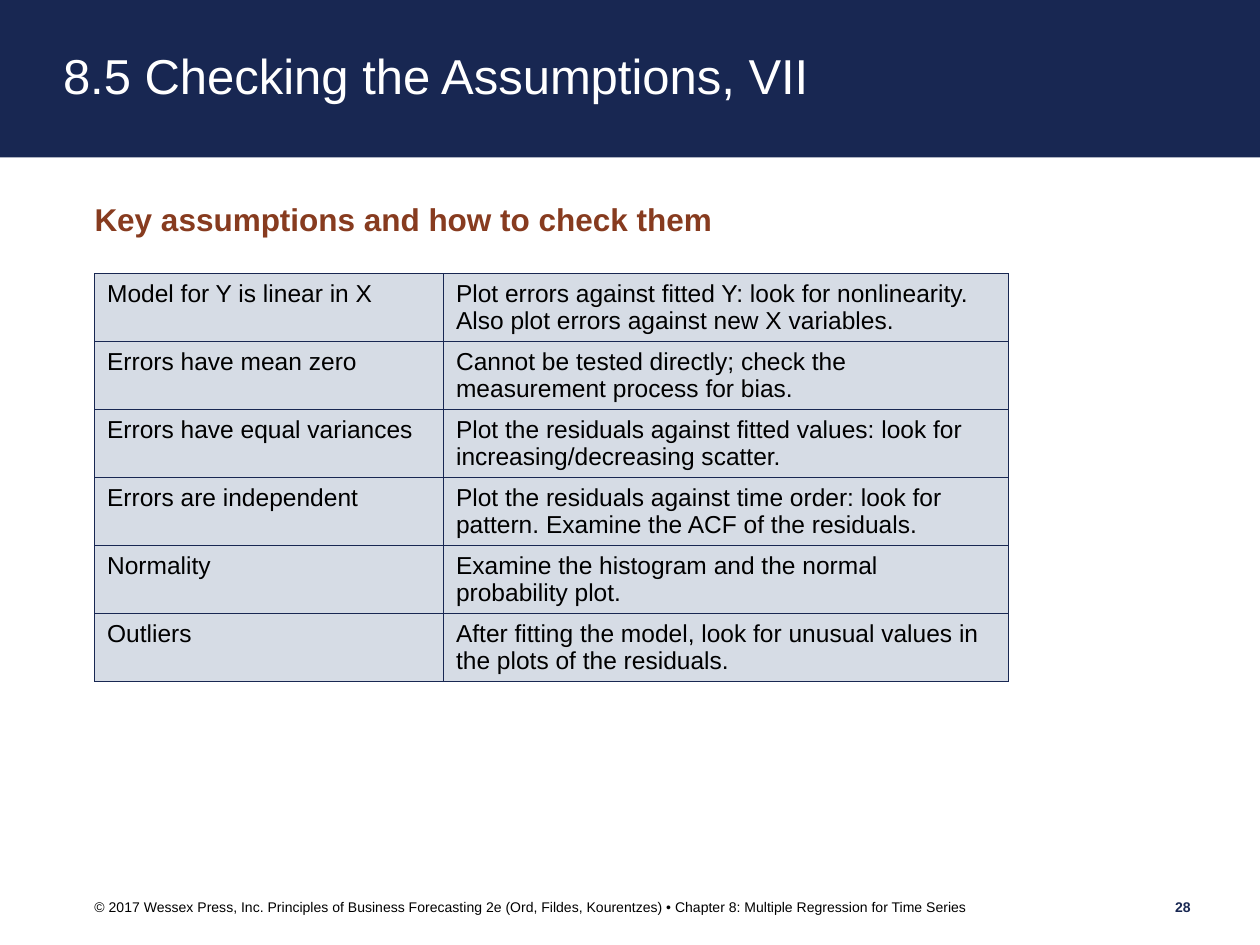
from dataclasses import dataclass

import lxml.etree
import pptx
import pptx.dml.color
import pptx.enum.text
import pptx.oxml.ns
import pptx.util

Inches = pptx.util.Inches
Pt = pptx.util.Pt
ANCHOR = pptx.enum.text.MSO_ANCHOR
ALIGN = pptx.enum.text.PP_ALIGN

NAVY, RUST, PALE, BLACK, WHITE = "182752", "873B1F", "D6DCE5", "000000", "FFFFFF"
TABLE_LEFT, TABLE_TOP, ROW_HEIGHT = 0.75, 2.17, 0.54
COLUMN_WIDTHS = (2.77, 4.48)


@dataclass
class Label:
    text: str
    left: float
    top: float
    width: float
    height: float
    size: int
    color: str
    bold: bool = False
    align: ALIGN = ALIGN.LEFT
    anchor: ANCHOR = ANCHOR.MIDDLE
    line_spacing: float = 1.0
    left_inset: float = 0
    vertical_inset: float = 0


@dataclass
class Assumption:
    name: str
    check: str


TITLE = Label("8.5 Checking the Assumptions, VII", 0, 0, 10, 1.25, 28, WHITE,
              line_spacing=0.9, left_inset=0.5, vertical_inset=0.05)
LABELS = [
    Label("Key assumptions and how to check them", 0.75, 1.62, 8.25, 5.14, 18, RUST,
          bold=True, anchor=ANCHOR.TOP, line_spacing=0.9),
    Label("© 2017 Wessex Press, Inc. Principles of Business Forecasting 2e "
          "(Ord, Fildes, Kourentzes) • Chapter 8: Multiple Regression for Time Series",
          0.75, 7.1, 8.14, 0.2, 8, BLACK),
    Label("28", 9, 7.1, 0.45, 0.2, 8, NAVY, bold=True, align=ALIGN.RIGHT),
]
ASSUMPTIONS = [
    Assumption("Model for Y is linear in X",
               "Plot errors against fitted Y: look for nonlinearity. "
               "Also plot errors against new X variables."),
    Assumption("Errors have mean zero",
               "Cannot be tested directly; check the measurement process for bias."),
    Assumption("Errors have equal variances",
               "Plot the residuals against fitted values: look for "
               "increasing/decreasing scatter."),
    Assumption("Errors are independent",
               "Plot the residuals against time order: look for pattern. "
               "Examine the ACF of the residuals."),
    Assumption("Normality", "Examine the histogram and the normal probability plot."),
    Assumption("Outliers",
               "After fitting the model, look for unusual values in the plots "
               "of the residuals."),
]


def rgb(color: str) -> pptx.dml.color.RGBColor:
    return pptx.dml.color.RGBColor.from_string(color)


def set_all(target, values: dict) -> None:
    for name, value in values.items():
        setattr(target, name, value)


def fill_solid(target, color: str) -> None:
    target.fill.solid()
    target.fill.fore_color.rgb = rgb(color)


def set_font(font, size: int, color: str, bold: bool = False) -> None:
    set_all(font, {"name": "Arial", "size": Pt(size), "bold": bold})
    font.color.rgb = rgb(color)


def format_label(shape, label: Label) -> None:
    """Place the shape and give it the label's text and format."""
    set_all(shape, {"left": Inches(label.left), "top": Inches(label.top),
                    "width": Inches(label.width), "height": Inches(label.height)})
    frame = shape.text_frame
    set_all(frame, {
        "text": label.text, "word_wrap": True, "vertical_anchor": label.anchor,
        "auto_size": pptx.enum.text.MSO_AUTO_SIZE.NONE,
        "margin_left": Inches(label.left_inset), "margin_right": 0,
        "margin_top": Inches(label.vertical_inset),
        "margin_bottom": Inches(label.vertical_inset),
    })
    paragraph = frame.paragraphs[0]
    set_all(paragraph, {"alignment": label.align, "line_spacing": label.line_spacing})
    set_font(paragraph.runs[0].font, label.size, label.color, label.bold)


def add_borders(cell, color: str, width: float) -> None:
    qn = pptx.oxml.ns.qn
    properties = cell._tc.get_or_add_tcPr()
    for side in ("lnL", "lnR", "lnT", "lnB"):
        line = lxml.etree.SubElement(properties, qn(f"a:{side}"), w=str(Pt(width)))
        solid = lxml.etree.SubElement(line, qn("a:solidFill"))
        lxml.etree.SubElement(solid, qn("a:srgbClr"), val=color)


def add_assumption_table(slide, assumptions: list[Assumption]) -> None:
    table = slide.shapes.add_table(
        len(assumptions), len(COLUMN_WIDTHS), Inches(TABLE_LEFT), Inches(TABLE_TOP),
        Inches(sum(COLUMN_WIDTHS)), Inches(ROW_HEIGHT * len(assumptions))).table
    set_all(table, {"first_row": False, "horz_banding": False})
    for column, width in zip(table.columns, COLUMN_WIDTHS):
        column.width = Inches(width)
    for row, assumption in zip(table.rows, assumptions):
        for cell, text in zip(row.cells, (assumption.name, assumption.check)):
            cell.text = text
            set_font(cell.text_frame.paragraphs[0].runs[0].font, 14, BLACK)
            add_borders(cell, NAVY, 0.5)
            fill_solid(cell, PALE)


def main() -> None:
    deck = pptx.Presentation()
    set_all(deck, {"slide_width": Inches(10), "slide_height": Inches(7.5)})
    slide = deck.slides.add_slide(deck.slide_layouts[5])
    fill_solid(slide.shapes.title, NAVY)
    format_label(slide.shapes.title, TITLE)
    for label in LABELS:
        format_label(slide.shapes.add_textbox(0, 0, 0, 0), label)
    add_assumption_table(slide, ASSUMPTIONS)
    deck.save("out.pptx")


if __name__ == "__main__":
    main()
